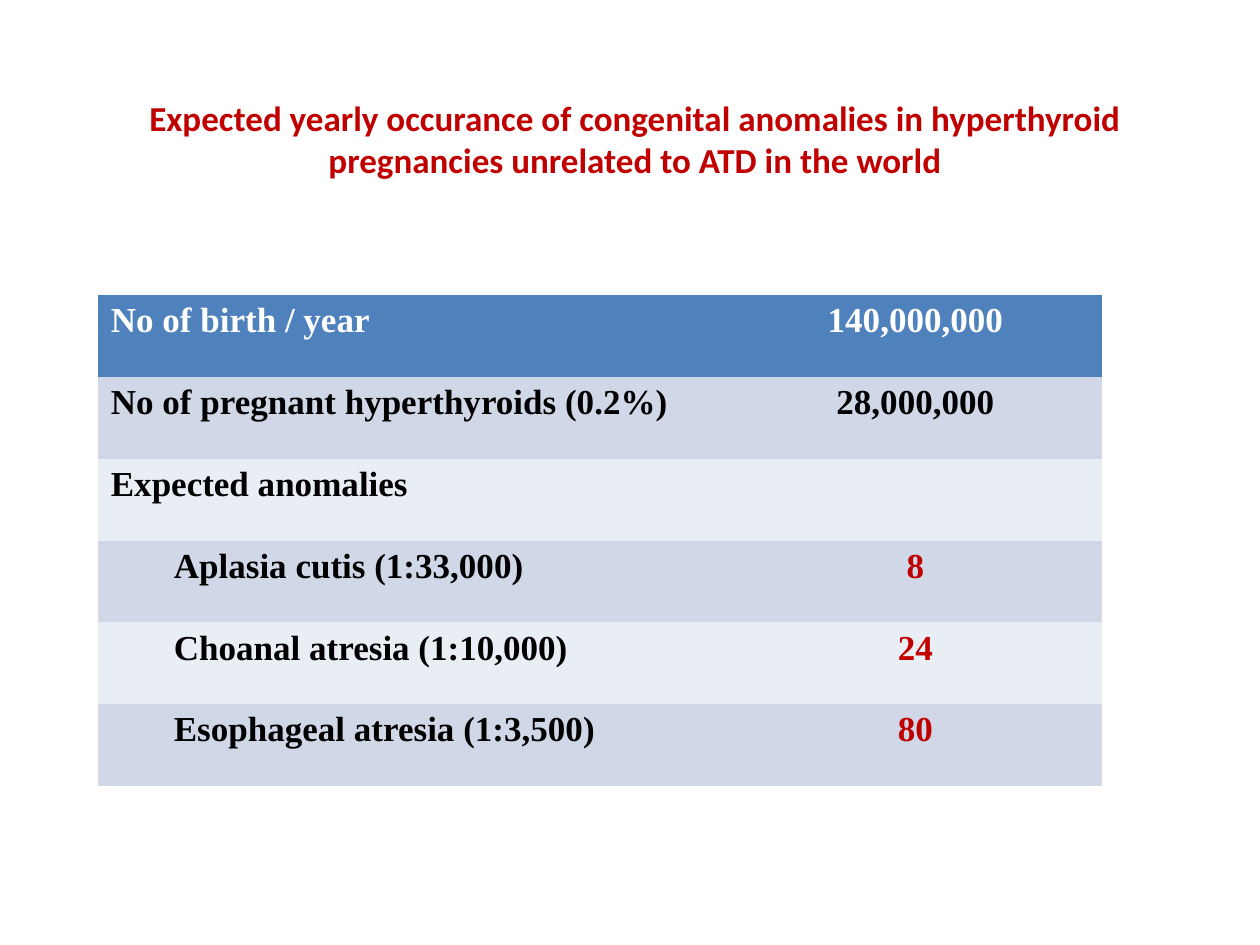
"""Build the slide on expected congenital anomalies in hyperthyroid pregnancies."""
from dataclasses import dataclass

import pptx
import pptx.dml.color
import pptx.enum.text
import pptx.oxml.ns
import pptx.slide
import pptx.table
import pptx.text.text
import pptx.util

Inches = pptx.util.Inches
Color = pptx.dml.color.RGBColor
Align = pptx.enum.text.PP_ALIGN

RED = Color(0xC0, 0x00, 0x00)
BLACK = Color(0x00, 0x00, 0x00)
WHITE = Color(0xFF, 0xFF, 0xFF)
BLUE = Color(0x4F, 0x81, 0xBD)
BANDS = (Color(0xE9, 0xED, 0xF4), Color(0xD0, 0xD8, 0xE8))
PLAIN = "{2D5ABB26-0587-4C30-8999-92F81FD0307C}"
TITLE = (
    "Expected yearly occurance of congenital anomalies in hyperthyroid "
    "pregnancies unrelated to ATD in the world"
)


@dataclass
class Row:
    """One table row: a label, its count and its nesting."""

    label: str
    count: str = ""
    nested: bool = False


ROWS = [
    Row("No of birth / year", "140,000,000"),
    Row("No of pregnant hyperthyroids (0.2%)", "28,000,000"),
    Row("Expected anomalies"),
    Row("Aplasia cutis (1:33,000)", "8", True),
    Row("Choanal atresia (1:10,000)", "24", True),
    Row("Esophageal atresia (1:3,500)", "80", True),
]


def write(para: pptx.text.text._Paragraph, text: str, face: str,
          color: Color, align: Align) -> None:
    """Put bold 20 point text in a paragraph."""
    para.text = text
    para.alignment = align
    para.font.name = face
    para.font.size = pptx.util.Pt(20)
    para.font.bold = True
    para.font.color.rgb = color


def add_title(slide: pptx.slide.Slide) -> None:
    """Add the centred heading."""
    box = slide.shapes.add_textbox(
        Inches(0.5), Inches(0.47), Inches(9.08), Inches(1.25))
    frame = box.text_frame
    frame.word_wrap = True
    frame.vertical_anchor = pptx.enum.text.MSO_ANCHOR.MIDDLE
    write(frame.paragraphs[0], TITLE, "Calibri", RED, Align.CENTER)


def fill_row(table: pptx.table.Table, index: int, row: Row) -> None:
    """Fill both cells of one row."""
    head = index == 0
    ink = WHITE if head else BLACK
    label, count = table.cell(index, 0), table.cell(index, 1)
    for cell in (label, count):
        cell.fill.solid()
        cell.fill.fore_color.rgb = BLUE if head else BANDS[index % 2]
    para = label.text_frame.paragraphs[0]
    write(para, row.label, "Times New Roman", ink, Align.LEFT)
    if row.nested:
        para.level = 1
        props = para._p.get_or_add_pPr()
        props.set("marL", str(Inches(0.5)))
        props.set("indent", "0")
    if row.count:
        write(count.text_frame.paragraphs[0], row.count, "Times New Roman",
              RED if row.nested else ink, Align.CENTER)


def add_grid(slide: pptx.slide.Slide) -> None:
    """Add the table of births and anomalies."""
    frame = slide.shapes.add_table(
        len(ROWS), 2, Inches(0.78), Inches(2.34),
        Inches(7.97), Inches(0.65) * len(ROWS))
    for style in frame.element.iter(pptx.oxml.ns.qn("a:tableStyleId")):
        style.text = PLAIN
    table = frame.table
    for column, width in zip(table.columns, (5, 2.97)):
        column.width = Inches(width)
    for index, row in enumerate(ROWS):
        fill_row(table, index, row)


def main() -> None:
    """Build and save the deck."""
    deck = pptx.Presentation()
    deck.slide_width, deck.slide_height = Inches(10), Inches(7.5)
    slide = deck.slides.add_slide(deck.slide_layouts[6])
    add_title(slide)
    add_grid(slide)
    deck.save("out.pptx")


if __name__ == "__main__":
    main()
